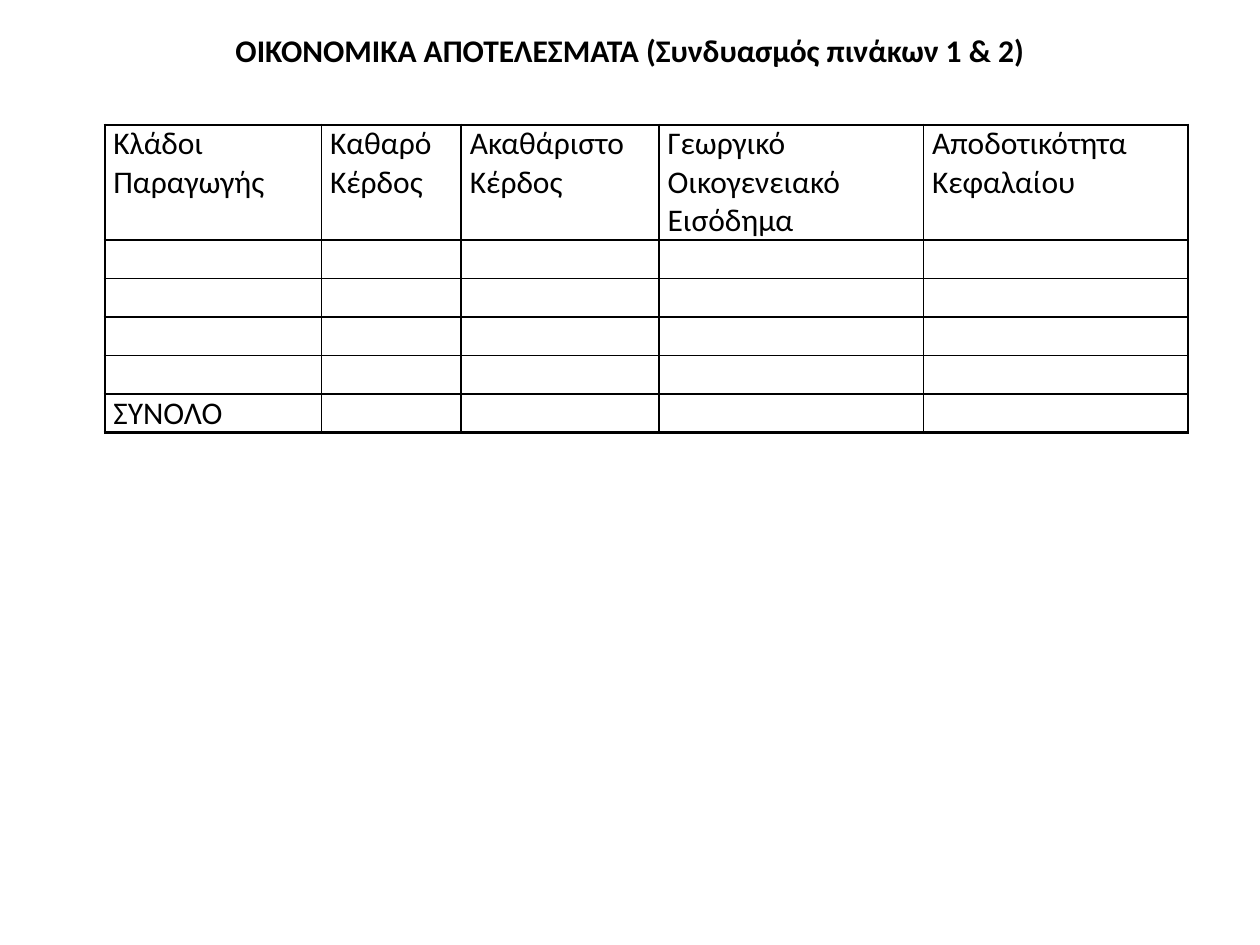
from lxml.etree import SubElement as Sub
from pptx import Presentation
from pptx.dml.color import RGBColor
from pptx.enum.text import MSO_ANCHOR as Anchor, PP_ALIGN as Align
from pptx.oxml.ns import qn
from pptx.util import Pt

INK = "000000"
FONT = {"name": "Calibri", "size": Pt(18)}
TITLE = "ΟΙΚΟΝΟΜΙΚΑ ΑΠΟΤΕΛΕΣΜΑΤΑ (Συνδυασμός πινάκων 1 & 2)"
HEADS = ["Κλάδοι Παραγωγής", "Καθαρό Κέρδος", "Ακαθάριστο Κέρδος",
         "Γεωργικό Οικογενειακό Εισόδημα", "Αποδοτικότητα Κεφαλαίου"]
ROWS = [HEADS] + [[""] * 5] * 4 + [["ΣΥΝΟΛΟ"] + [""] * 4]
WIDTHS = [123.8, 79.9, 113, 151.2, 151.2]
HEIGHTS = [64.8] + [21.6] * 5


def put(item, vals):
    """Set each attribute of the item from a dict."""
    for key, val in vals.items():
        setattr(item, key, val)


def paint(color, tone):
    """Give a color format its hex tone."""
    color.rgb = RGBColor.from_string(tone)


def write(par, text, bold=False):
    """Add a styled run of text to a paragraph."""
    run = par.add_run()
    run.text = text
    put(run.font, FONT | {"bold": bold})
    paint(run.font.color, INK)


def edge(cell, side, width):
    """Draw one border of a cell."""
    props = cell._tc.get_or_add_tcPr()
    line = Sub(props, qn(f"a:ln{side}"), w=str(Pt(width)))
    fill = Sub(line, qn("a:solidFill"))
    Sub(fill, qn("a:srgbClr"), val=INK)


def title(slide, x, y, w, h):
    """Place the centred heading in its box."""
    frame = slide.shapes.add_textbox(Pt(x), Pt(y), Pt(w), Pt(h)).text_frame
    put(frame, {"word_wrap": True, "vertical_anchor": Anchor.MIDDLE})
    par = frame.paragraphs[0]
    par.alignment = Align.CENTER
    write(par, TITLE, True)


def results(slide, x, y):
    """Place the results table with a heavier outer frame."""
    rows, cols = len(ROWS), len(WIDTHS)
    table = slide.shapes.add_table(rows, cols, Pt(x), Pt(y), Pt(sum(WIDTHS)),
                                   Pt(sum(HEIGHTS))).table
    put(table, {"first_row": False, "horz_banding": False})
    for col, width in zip(table.columns, WIDTHS):
        col.width = Pt(width)
    for r, (row, height) in enumerate(zip(table.rows, HEIGHTS)):
        row.height = Pt(height)
        for c, cell in enumerate(row.cells):
            put(cell, {"margin_left": Pt(5), "margin_right": Pt(5),
                       "margin_top": 0, "margin_bottom": 0})
            outer = {"L": c == 0, "R": c == cols - 1,
                     "T": r == 0, "B": r == rows - 1}
            for side, rim in outer.items():
                edge(cell, side, 1.5 if rim else 1)
            cell.fill.background()
            par = cell.text_frame.paragraphs[0]
            if ROWS[r][c]:
                write(par, ROWS[r][c])
            else:
                Sub(par._p, qn("a:endParaRPr"), sz="1800")


def main():
    """Build and save the slide."""
    deck = Presentation()
    put(deck, {"slide_width": Pt(720), "slide_height": Pt(540)})
    slide = deck.slides.add_slide(deck.slide_layouts[6])
    results(slide, 59.8, 71.3)
    title(slide, 0, 14.4, 720, 28.8)
    deck.save("out.pptx")


if __name__ == "__main__":
    main()
